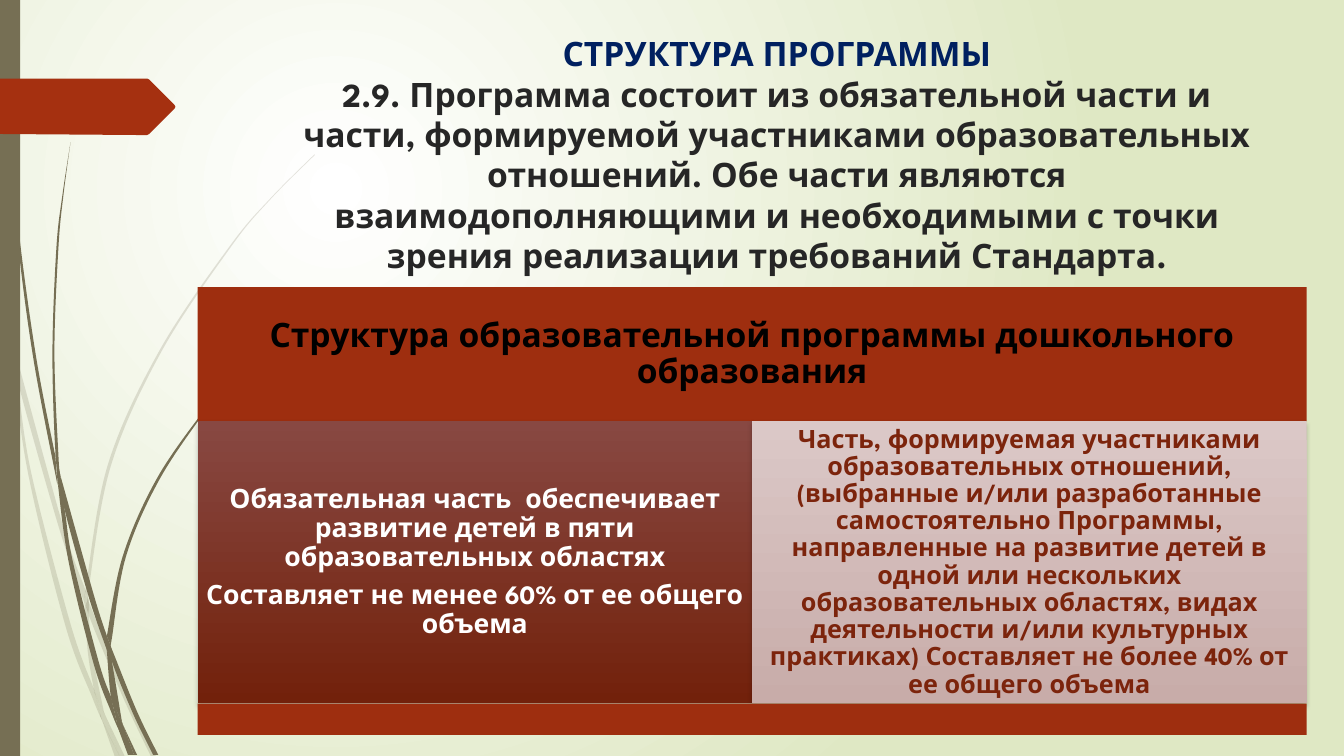
from dataclasses import dataclass

import lxml.etree
import pptx
import pptx.dml.color
import pptx.enum.shapes
import pptx.enum.text
import pptx.oxml.ns
import pptx.shapes.autoshape
import pptx.shapes.shapetree
import pptx.slide
import pptx.util

PX = 9144
FONT = "League Spartan"
COLOURS = {
    "white": "FFFFFF", "meadow": "DFE8C4", "stem": "766F54", "ribbon": "A53010",
    "band": "9E2E0F", "rose": "884842", "maroon": "72210B", "blush": "DBC8C7",
    "dusk": "C8ACA9", "rust": "7C240C", "navy": "002060", "ink": "262626", "black": "000000",
}
Edge = list[tuple[int, int]]


@dataclass
class Leaf:
    """One piece of a grass blade, bounded by two curved edges."""
    out: Edge
    back: Edge


@dataclass
class Panel:
    """One block of the programme diagram."""
    box: tuple[int, int, int, int]
    fill: tuple[str, ...]
    paragraphs: tuple[str, ...] = ()
    colour: str = "white"
    size: int = 18
    gap: int = 6
    inset: int = 10


PALE_GRASS = [
    Leaf([(11, 350), (9, 322), (0, 282)], [(0, 299), (10, 344), (11, 350)]),
    Leaf([(14, 345), (17, 376), (58, 522), (84, 599)], [(85, 586), (62, 520), (14, 345)]),
    Leaf([(88, 596), (92, 607), (127, 692), (155, 751)],
         [(150, 751), (123, 694), (88, 610), (88, 596)]),
    Leaf([(105, 711), (124, 751)], [(119, 751), (105, 711)]),
    Leaf([(11, 350), (17, 376), (31, 469), (70, 619), (93, 683)],
         [(99, 707), (101, 714), (92, 693), (65, 621), (28, 470), (11, 350)]),
    Leaf([(84, 599), (87, 646), (93, 683), (96, 692), (105, 711)],
         [(103, 706), (91, 646), (88, 610), (84, 599)]),
    Leaf([(88, 596), (88, 584), (110, 462), (160, 349), (229, 245), (268, 198), (312, 154)],
         [(312, 153), (268, 197), (228, 244), (158, 348), (107, 461), (85, 584), (85, 586)]),
    Leaf([(101, 714), (114, 751)], [(119, 751), (101, 714)]),
    Leaf([(88, 608), (88, 596), (85, 586)], [(84, 599), (88, 608)]),
    Leaf([(93, 683), (99, 707), (101, 714), (119, 751)], [(105, 711), (96, 692), (93, 683)]),
]
DARK_GRASS = [
    Leaf([(3, 0), (4, 48), (7, 110), (17, 233), (33, 355), (57, 481)],
         [(55, 453), (36, 355), (19, 232), (8, 109), (5, 48), (4, 0)]),
    Leaf([(60, 472), (64, 505), (88, 592), (106, 645)], [(106, 631), (93, 590), (60, 472)]),
    Leaf([(110, 641), (113, 649), (136, 706), (157, 749)],
         [(152, 749), (132, 708), (111, 656), (110, 641)]),
    Leaf([(57, 477), (64, 505), (72, 556), (98, 657), (110, 691)],
         [(116, 717), (117, 722), (111, 708), (93, 659), (68, 557), (57, 477)]),
    Leaf([(60, 472), (58, 453), (54, 349), (58, 245), (63, 193), (70, 141)],
         [(70, 141), (62, 193), (56, 245), (52, 349), (55, 449), (60, 472)]),
    Leaf([(122, 719), (136, 749)], [(133, 749), (122, 719)]),
    Leaf([(57, 477), (64, 505), (60, 472)], [(55, 449), (57, 477)]),
    Leaf([(110, 641), (111, 633), (125, 552), (158, 476), (205, 406), (231, 374), (261, 344)],
         [(260, 344), (231, 373), (204, 405), (156, 474), (122, 551), (106, 631)]),
    Leaf([(117, 722), (127, 749)], [(131, 749), (117, 722)]),
    Leaf([(106, 645), (110, 691), (116, 706), (122, 719)],
         [(121, 716), (111, 656), (109, 651), (106, 645)]),
    Leaf([(106, 645), (111, 656), (110, 641)], [(106, 631), (106, 645)]),
    Leaf([(110, 691), (116, 717), (117, 722), (130, 749)],
         [(133, 749), (122, 719), (116, 706), (110, 691)]),
]
RIBBON = [(0, 78), (146, 78), (148, 79), (173, 104), (174, 106), (173, 108), (148, 133),
          (146, 134), (136, 134), (0, 133)]
TITLE = [
    ("СТРУКТУРА ПРОГРАММЫ", "navy"),
    ("2.9. Программа состоит из обязательной части и части, формируемой участниками "
     "образовательных отношений. Обе части являются взаимодополняющими и необходимыми "
     "с точки зрения реализации требований Стандарта.", "ink"),
]
LEFT, TOP, WIDTH, HEAD, BODY, FOOT = 196, 285, 1100, 133, 280, 31
HALF = WIDTH // 2
PANELS = [
    Panel((LEFT, TOP, WIDTH, HEAD), ("band",),
          ("Структура образовательной программы дошкольного образования",), "black", 24, 8),
    Panel((LEFT, TOP + HEAD, HALF, BODY), ("rose", "maroon"),
          ("Обязательная часть  обеспечивает развитие детей в пяти образовательных областях",
           "Составляет не менее 60% от ее общего объема"), "white", 19, 7, 8),
    Panel((LEFT + HALF, TOP + HEAD, HALF, BODY), ("blush", "dusk"),
          ("Часть, формируемая участниками образовательных отношений, (выбранные и/или "
           "разработанные самостоятельно Программы, направленные на развитие детей в одной "
           "или нескольких образовательных областях, видах деятельности и/или культурных "
           "практиках) Составляет не более 40% от ее общего объема",), "rust", 18, 6, 7),
    Panel((LEFT, TOP + HEAD + BODY, WIDTH, FOOT), ("band",)),
]


def rgb(name: str) -> pptx.dml.color.RGBColor:
    return pptx.dml.color.RGBColor.from_string(COLOURS[name])


def add_element(parent: lxml.etree._Element, tag: str, **attributes: str) -> lxml.etree._Element:
    return lxml.etree.SubElement(parent, pptx.oxml.ns.qn(tag), **attributes)


def curve_points(edge: Edge) -> list[tuple[float, float]]:
    padded = [edge[0], *edge, edge[-1]]
    points = []
    for a, b, c, d in zip(padded, padded[1:], padded[2:], padded[3:]):
        points.append(tuple(q + (r - p) / 6 for p, q, r in zip(a, b, c)))
        points.append(tuple(r - (s - q) / 6 for q, r, s in zip(b, c, d)))
        points.append(c)
    return points


def draw_outline(shapes: pptx.shapes.shapetree._BaseGroupShapes, points: list,
                 colour: str) -> pptx.shapes.autoshape.Shape:
    corners = [(x * PX, y * PX) for x, y in points]
    builder = shapes.build_freeform(*corners[0])
    builder.add_line_segments(corners[1:], close=True)
    outline = builder.convert_to_shape()
    outline.shadow.inherit = False
    outline.fill.solid()
    outline.fill.fore_color.rgb = rgb(colour)
    outline.line.fill.background()
    return outline


def bend_segments(outline: pptx.shapes.autoshape.Shape) -> None:
    segments = list(outline._element.iter(pptx.oxml.ns.qn("a:lnTo")))
    for first, second, third in zip(segments[::3], segments[1::3], segments[2::3]):
        first.tag = pptx.oxml.ns.qn("a:cubicBezTo")
        for segment in (second, third):
            first.append(segment[0])
            segment.getparent().remove(segment)


def draw_grass(slide: pptx.slide.Slide, leaves: list[Leaf], opacity: int) -> None:
    tuft = slide.shapes.add_group_shape()
    for leaf in leaves:
        tip = curve_points([leaf.out[-1], leaf.back[0]])
        points = [leaf.out[0], *curve_points(leaf.out), *tip, *curve_points(leaf.back)]
        blade = draw_outline(tuft.shapes, points, "stem")
        bend_segments(blade)
        if opacity < 100:
            tint = blade._element.spPr.find(".//" + pptx.oxml.ns.qn("a:srgbClr"))
            add_element(tint, "a:alpha", val=str(opacity * 1000))


def add_run(paragraph, text: str, size: int, colour: str) -> None:
    run = paragraph.add_run()
    run.text = text
    run.font.name = FONT
    run.font.size = pptx.util.Pt(size)
    run.font.bold = True
    run.font.color.rgb = rgb(colour)


def set_gradient(fill, colours: tuple[str, ...]) -> None:
    fill.gradient()
    for stop, colour in zip(fill.gradient_stops, colours):
        stop.color.rgb = rgb(colour)


def draw_panel(slide: pptx.slide.Slide, panel: Panel) -> None:
    box = [length * PX for length in panel.box]
    block = slide.shapes.add_shape(pptx.enum.shapes.MSO_SHAPE.RECTANGLE, *box)
    block.shadow.inherit = False
    block.line.fill.background()
    if len(panel.fill) == 1:
        block.fill.solid()
        block.fill.fore_color.rgb = rgb(panel.fill[0])
    else:
        set_gradient(block.fill, panel.fill)
        block.fill.gradient_angle = 270
        effects = block._element.spPr.find(pptx.oxml.ns.qn("a:effectLst"))
        shadow = add_element(effects, "a:outerShdw", blurRad="38100", dist="25400", dir="5400000")
        shade = add_element(shadow, "a:srgbClr", val=COLOURS["black"])
        add_element(shade, "a:alpha", val="25000")
    if panel.paragraphs:
        write_panel(slide, panel, box)


def write_panel(slide: pptx.slide.Slide, panel: Panel, box: list[int]) -> None:
    frame = slide.shapes.add_textbox(*box).text_frame
    frame.word_wrap = True
    frame.vertical_anchor = pptx.enum.text.MSO_ANCHOR.MIDDLE
    frame.margin_left = frame.margin_right = panel.inset * PX
    frame.margin_top = frame.margin_bottom = panel.inset * PX
    for index, text in enumerate(panel.paragraphs):
        paragraph = frame.add_paragraph() if index else frame.paragraphs[0]
        paragraph.alignment = pptx.enum.text.PP_ALIGN.CENTER
        paragraph.line_spacing = 0.9
        paragraph.space_after = pptx.util.Pt(panel.gap)
        add_run(paragraph, text, panel.size, panel.colour)


def paint_background(slide: pptx.slide.Slide) -> None:
    set_gradient(slide.background.fill, ("white", "meadow"))
    linear = slide.element.find(".//" + pptx.oxml.ns.qn("a:lin"))
    gradient = linear.getparent()
    gradient.remove(linear)
    glow = add_element(gradient, "a:path", path="circle")
    add_element(glow, "a:fillToRect", l="50000", t="50000", r="100000", b="100000")


def write_title(slide: pptx.slide.Slide) -> None:
    heading = slide.shapes.title
    heading.left, heading.top, heading.width, heading.height = (
        length * PX for length in (283, 28, 975, 242))
    frame = heading.text_frame
    frame.word_wrap = True
    frame.auto_size = pptx.enum.text.MSO_AUTO_SIZE.NONE
    frame.vertical_anchor = pptx.enum.text.MSO_ANCHOR.TOP
    paragraph = frame.paragraphs[0]
    paragraph.alignment = pptx.enum.text.PP_ALIGN.CENTER
    for index, (text, colour) in enumerate(TITLE):
        if index:
            paragraph.add_line_break()
        add_run(paragraph, text, 24, colour)


def main() -> None:
    """Build the slide about the structure of the preschool programme."""
    deck = pptx.Presentation()
    deck.slide_width, deck.slide_height = 1333 * PX, 750 * PX
    slide = deck.slides.add_slide(deck.slide_layouts[5])
    paint_background(slide)
    draw_grass(slide, PALE_GRASS, 20)
    draw_grass(slide, DARK_GRASS, 100)
    draw_panel(slide, Panel((0, 0, 20, 750), ("stem",)))
    draw_outline(slide.shapes, RIBBON, "ribbon")
    write_title(slide)
    for panel in PANELS:
        draw_panel(slide, panel)
    deck.save("out.pptx")


if __name__ == "__main__":
    main()
